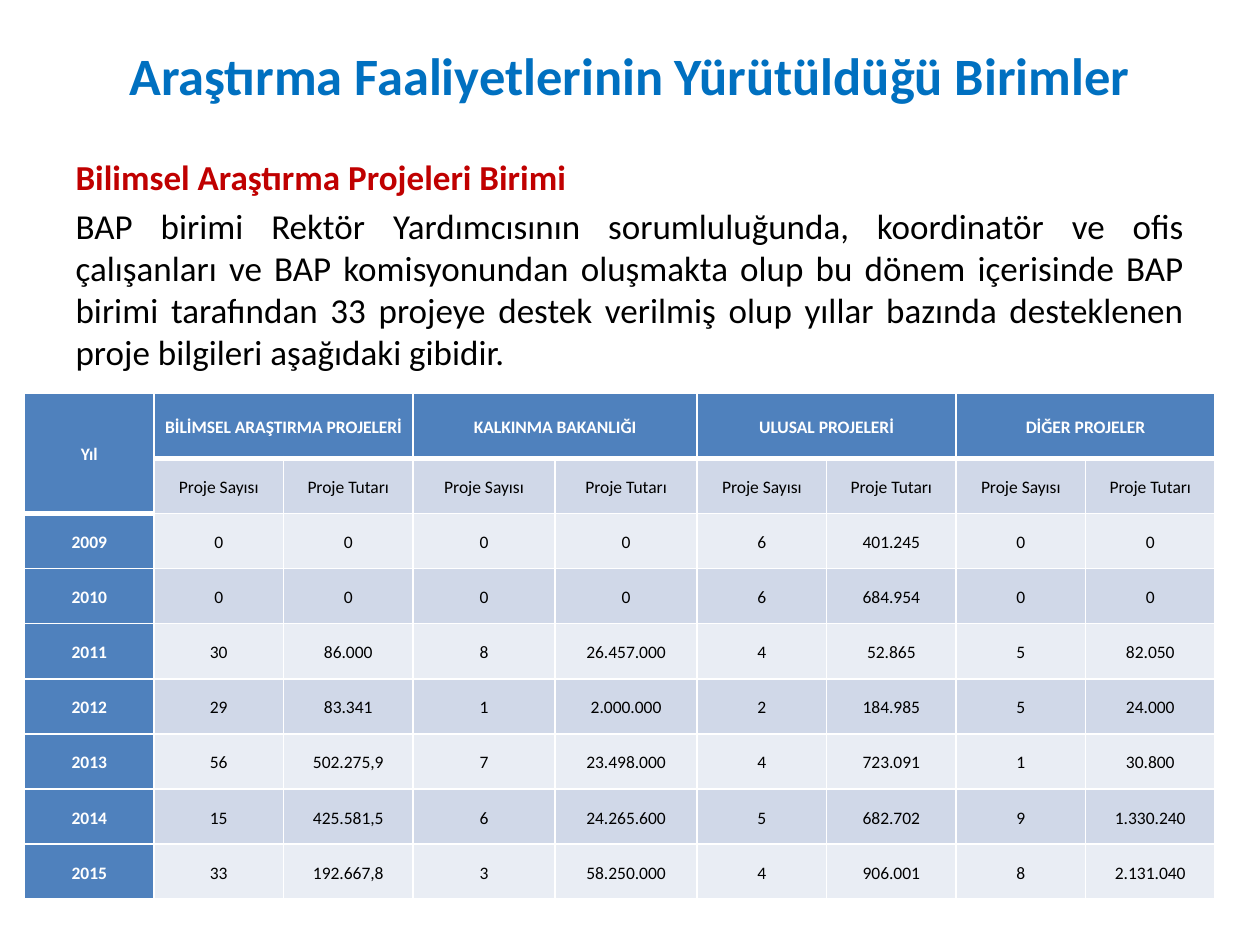
from lxml import etree
from pptx import Presentation
from pptx.dml.color import RGBColor
from pptx.enum import text as tx
from pptx.oxml import ns
from pptx.util import Pt

BLUE = RGBColor(0x00, 0x70, 0xC0)
RED = RGBColor(0xC0, 0x00, 0x00)
BLACK = RGBColor(0x00, 0x00, 0x00)
WHITE = RGBColor(0xFF, 0xFF, 0xFF)
HEAD = RGBColor(0x4F, 0x81, 0xBD)
BANDS = (RGBColor(0xE9, 0xED, 0xF4), RGBColor(0xD0, 0xD8, 0xE8))

TITLE = "Araştırma Faaliyetlerinin Yürütüldüğü Birimler"
LEAD = "Bilimsel Araştırma Projeleri Birimi"
BODY = (
    "BAP birimi Rektör Yardımcısının sorumluluğunda, koordinatör ve ofis "
    "çalışanları ve BAP komisyonundan oluşmakta olup bu dönem içerisinde BAP "
    "birimi tarafından 33 projeye destek verilmiş olup yıllar bazında "
    "desteklenen proje bilgileri aşağıdaki gibidir."
)
GROUPS = [
    "BİLİMSEL ARAŞTIRMA PROJELERİ",
    "KALKINMA BAKANLIĞI",
    "ULUSAL PROJELERİ",
    "DİĞER PROJELER",
]
PAIR = ["Proje Sayısı", "Proje Tutarı"]
YEARS = [
    ["2009", "0", "0", "0", "0", "6", "401.245", "0", "0"],
    ["2010", "0", "0", "0", "0", "6", "684.954", "0", "0"],
    ["2011", "30", "86.000", "8", "26.457.000", "4", "52.865", "5", "82.050"],
    ["2012", "29", "83.341", "1", "2.000.000", "2", "184.985", "5", "24.000"],
    ["2013", "56", "502.275,9", "7", "23.498.000", "4", "723.091", "1", "30.800"],
    ["2014", "15", "425.581,5", "6", "24.265.600", "5", "682.702", "9", "1.330.240"],
    ["2015", "33", "192.667,8", "3", "58.250.000", "4", "906.001", "8", "2.131.040"],
]
WIDTHS = [74, 74, 74, 81.2, 81.2, 74, 74, 74, 74]
HEIGHTS = [37.4] + [31.5] * 8


def write(para, words, size=10, color=BLACK, bold=False, align=tx.PP_ALIGN.CENTER, lead=None):
    """Put formatted text into a paragraph."""
    para.alignment = align
    if lead:
        para.line_spacing = lead
    run = para.add_run()
    run.text = words
    font = run.font
    font.name, font.size, font.bold = "Calibri", Pt(size), bold
    font.color.rgb = color


def place(shape, left, top, width, height):
    """Move and size a placeholder, and return its text frame."""
    shape.left, shape.top = Pt(left), Pt(top)
    shape.width, shape.height = Pt(width), Pt(height)
    frame = shape.text_frame
    frame.auto_size = tx.MSO_AUTO_SIZE.NONE
    return frame


def plain(para):
    """Remove the bullet and the indent of a paragraph."""
    props = para._p.get_or_add_pPr()
    props.set("marL", "0")
    props.set("indent", "0")
    etree.SubElement(props, ns.qn("a:buNone"))


def edge(cell, side, width):
    """Draw one white border of a cell."""
    line = etree.SubElement(cell._tc.get_or_add_tcPr(), ns.qn("a:ln" + side), w=str(Pt(width)))
    fill = etree.SubElement(line, ns.qn("a:solidFill"))
    etree.SubElement(fill, ns.qn("a:srgbClr"), val=str(WHITE))


def style(cell, row, col):
    """Give a cell its margins, borders and fill."""
    cell.margin_left = cell.margin_right = Pt(3.6)
    cell.margin_top = cell.margin_bottom = 0
    cell.vertical_anchor = tx.MSO_ANCHOR.MIDDLE
    edge(cell, "L", 1)
    edge(cell, "R", 1)
    if row == 0:
        edge(cell, "T", 1)
    edge(cell, "B", 3 if row == 0 or (row, col) == (1, 0) else 1)
    cell.fill.solid()
    cell.fill.fore_color.rgb = HEAD if row == 0 or col == 0 else BANDS[row % 2]


def grid(slide):
    """Build the table of projects by year."""
    top = ["Yıl"] + [word for name in GROUPS for word in (name, "")]
    rows = [top, [""] + PAIR * len(GROUPS)] + YEARS
    frame = slide.shapes.add_table(
        len(rows), len(top), Pt(14), Pt(224.5), Pt(sum(WIDTHS)), Pt(sum(HEIGHTS)))
    table = frame.table
    for col, width in zip(table.columns, WIDTHS):
        col.width = Pt(width)
    for row, height in zip(table.rows, HEIGHTS):
        row.height = Pt(height)
    for r, words in enumerate(rows):
        for c, word in enumerate(words):
            cell = table.cell(r, c)
            style(cell, r, c)
            if word:
                head = r == 0 or c == 0
                write(cell.text_frame.paragraphs[0], word, bold=head,
                      color=WHITE if head else BLACK, lead=1.15)
    table.cell(0, 0).merge(table.cell(1, 0))
    for c in range(1, len(top), 2):
        table.cell(0, c).merge(table.cell(0, c + 1))


def main():
    """Build the slide and save it."""
    deck = Presentation()
    deck.slide_width, deck.slide_height = Pt(720), Pt(540)
    slide = deck.slides.add_slide(deck.slide_layouts[1])
    title, body = slide.placeholders
    frame = place(title, 36, -2.4, 648, 90)
    write(frame.paragraphs[0], TITLE, size=30, color=BLUE, bold=True)
    frame = place(body, 36, 85, 648, 139.8)
    just = tx.PP_ALIGN.JUSTIFY
    write(frame.paragraphs[0], LEAD, size=20, color=RED, bold=True, align=just)
    write(frame.add_paragraph(), BODY, size=20, align=just)
    for para in frame.paragraphs:
        plain(para)
    grid(slide)
    deck.save("out.pptx")


if __name__ == "__main__":
    main()
